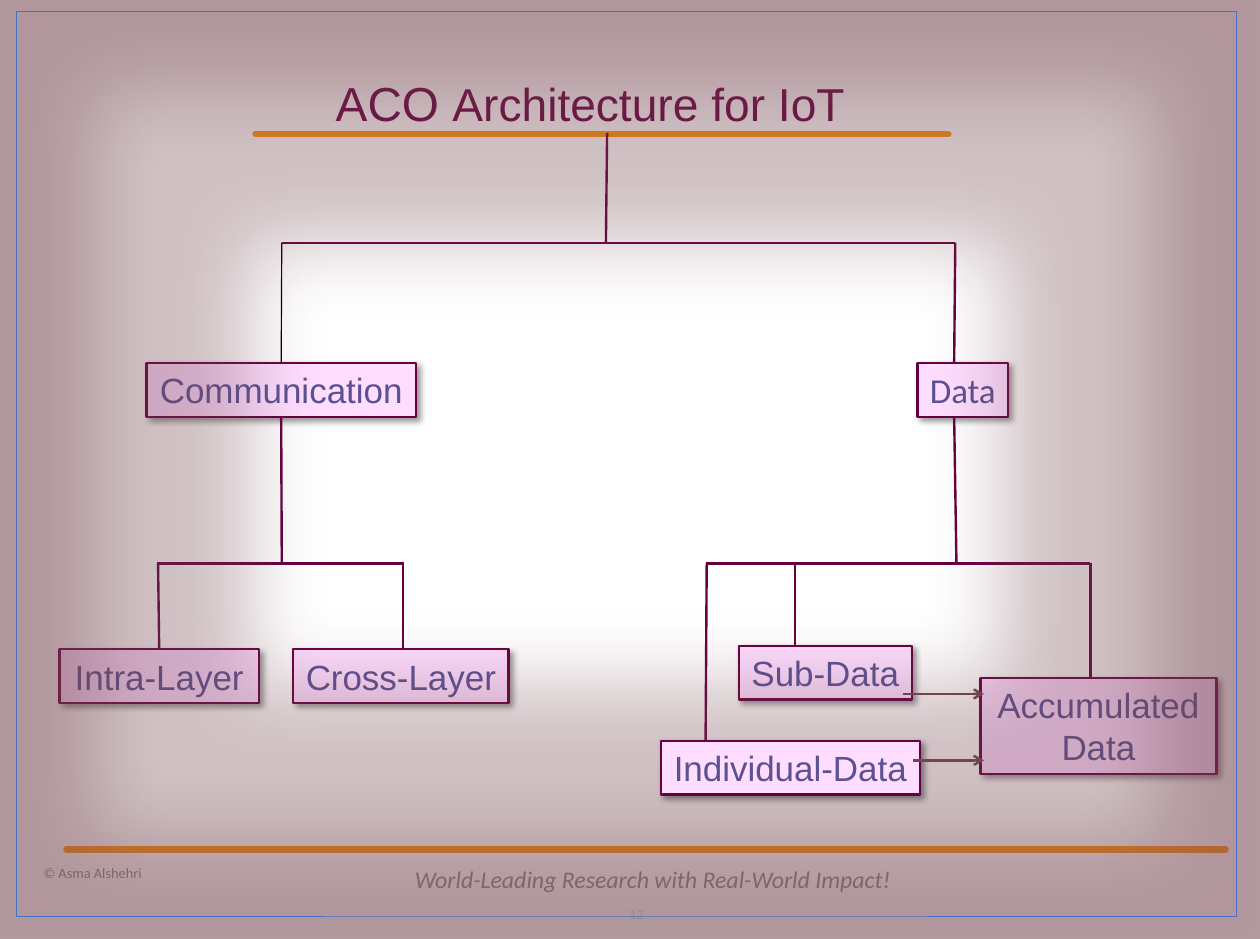
from lxml import etree
from pptx import Presentation
from pptx.dml.color import RGBColor
from pptx.enum.shapes import MSO_CONNECTOR, MSO_SHAPE
from pptx.enum.text import MSO_ANCHOR, MSO_AUTO_SIZE, PP_ALIGN
from pptx.oxml.ns import qn
from pptx.util import Pt

PX = 9144  # 100 px to the inch
STRAIGHT, RECTANGLE = MSO_CONNECTOR.STRAIGHT, MSO_SHAPE.RECTANGLE
LEFT, CENTER, RIGHT = PP_ALIGN.LEFT, PP_ALIGN.CENTER, PP_ALIGN.RIGHT
MIDDLE, BOTTOM = MSO_ANCHOR.MIDDLE, MSO_ANCHOR.BOTTOM
TOP_SIDE, BOTTOM_SIDE = 0, 2

PLUM = RGBColor(0x66, 0x00, 0x40)
ORANGE = RGBColor(0xFF, 0x95, 0x0E)
PINK = RGBColor(0xFE, 0xDD, 0xFF)
VIOLET = RGBColor(0x5C, 0x51, 0x93)
GRAY = RGBColor(0x8C, 0x8C, 0x8C)
MAUVE = RGBColor(0x73, 0x44, 0x4E)
BLUE = RGBColor(0x44, 0x72, 0xC4)
BLACK = RGBColor(0, 0, 0)


def px(*lengths):
    return [length * PX for length in lengths]


def add_effect(shape, name=None, color=BLACK, alpha=100, **attributes):
    """Give the shape one effect, or an empty effect list."""
    properties = shape._element.spPr
    for old in properties.findall(qn("a:effectLst")):
        properties.remove(old)
    effects = etree.SubElement(properties, qn("a:effectLst"))
    if name:
        effect = etree.SubElement(effects, qn(name), attributes)
        value = etree.SubElement(effect, qn("a:srgbClr"), val=str(color))
        etree.SubElement(value, qn("a:alpha"), val=str(alpha * 1000))


def add_run(paragraph, text, **formats):
    run = paragraph.add_run()
    run.text = text
    color = formats.pop("color")
    for name, value in formats.items():
        setattr(run.font, name, value)
    run.font.color.rgb = color


def add_line(slide, start, end, color=PLUM, width=1.5, cap=None, arrow=False):
    line = slide.shapes.add_connector(STRAIGHT, *px(*start, *end))
    line.line.color.rgb = color
    line.line.width = Pt(width)
    outline = line.line._get_or_add_ln()
    if cap:
        outline.set("cap", cap)
    if arrow:
        etree.SubElement(outline, qn("a:tailEnd"), type="arrow")
    add_effect(line)
    return line


def add_box(slide, lines, position, font="Arial", wrap=False):
    box = slide.shapes.add_shape(RECTANGLE, *px(*position))
    box.fill.solid()
    box.fill.fore_color.rgb = PINK
    box.line.color.rgb = PLUM
    box.line.width = Pt(1.5)
    add_effect(box, "a:outerShdw", alpha=40, blurRad=str(Pt(4)),
               dist=str(Pt(3)), dir="2700000", algn="tl", rotWithShape="0")
    frame = box.text_frame
    frame.word_wrap = wrap
    frame.auto_size = MSO_AUTO_SIZE.SHAPE_TO_FIT_TEXT
    frame.vertical_anchor = MIDDLE
    for index, text in enumerate(lines):
        paragraph = frame.add_paragraph() if index else frame.paragraphs[0]
        paragraph.alignment = CENTER
        add_run(paragraph, text, name=font, size=Pt(22), color=VIOLET)
    return box


def add_footer(slide, text, position, alignment, size=9, italic=False):
    frame = slide.shapes.add_textbox(*px(*position)).text_frame
    frame.word_wrap = True
    frame.vertical_anchor = MIDDLE
    paragraph = frame.paragraphs[0]
    paragraph.alignment = alignment
    add_run(paragraph, text, name="Calibri", size=Pt(size), italic=italic, color=GRAY)


def set_title(slide):
    title = slide.shapes.title
    title.left, title.top, title.width, title.height = px(219, 65, 593, 55)
    frame = title.text_frame
    frame.auto_size = MSO_AUTO_SIZE.NONE
    frame.vertical_anchor = BOTTOM
    paragraph = frame.paragraphs[0]
    paragraph.alignment = CENTER
    paragraph.line_spacing = 0.9
    for text, size in (("ACO ", 30), ("Architecture for IoT", 29)):
        add_run(paragraph, text, name="Arial", size=Pt(size), color=PLUM)


def add_frame(slide):
    frame = slide.shapes.add_shape(RECTANGLE, *px(14, 10, 1065, 790))
    frame.fill.background()
    frame.line.color.rgb = BLUE
    frame.line.width = Pt(0.5)
    add_effect(frame, "a:glow", MAUVE, 33, rad=str(Pt(100)))


def main():
    presentation = Presentation()
    presentation.slide_width, presentation.slide_height = px(1100, 820)
    slide = presentation.slides.add_slide(presentation.slide_layouts[5])

    # Title and orange rules
    set_title(slide)
    for left, right, y in ((223, 828, 117), (58, 1070, 742)):
        add_line(slide, (left, y), (right, y), ORANGE, 4, cap="rnd")

    # Footer
    add_footer(slide, "World-Leading Research with Real-World Impact!",
               (330, 746, 480, 44), CENTER, 15, True)
    add_footer(slide, "© Asma Alshehri", (28, 742, 302, 40), LEFT)

    # Boxes of the tree
    communication = add_box(slide, ["Communication"], (128, 317, 235, 47))
    add_box(slide, ["Data"], (801, 317, 79, 47), "Calibri")
    intra_layer = add_box(slide, ["Intra-Layer"], (52, 567, 174, 47))
    add_box(slide, ["Cross-Layer"], (256, 567, 188, 47))
    add_box(slide, ["Sub-Data"], (645, 564, 151, 47))
    add_box(slide, ["Accumulated", "Data"], (856, 592, 206, 84), wrap=True)

    # Branches that meet the middle of a box side
    add_line(slide, (246, 212), (246, 317), BLACK, 0.75).end_connect(communication, TOP_SIDE)
    add_line(slide, (246, 364), (246, 492)).begin_connect(communication, BOTTOM_SIDE)
    add_line(slide, (138, 492), (138, 567)).end_connect(intra_layer, TOP_SIDE)

    # Other branches
    for start, end in (
        ((530, 116), (529, 212)),
        ((246, 212), (834, 212)),
        ((834, 212), (833, 317)),
        ((833, 364), (835, 492)),
        ((137, 492), (353, 492)),
        ((352, 492), (352, 567)),
        ((616, 492), (952, 492)),
        ((617, 492), (616, 647)),
        ((694, 492), (694, 564)),
        ((952, 492), (952, 592)),
    ):
        add_line(slide, start, end)

    # Glowing frame, with the last box and the arrows above it
    add_frame(slide)
    add_box(slide, ["Individual-Data"], (577, 647, 226, 47))
    for left, y in ((788, 606), (797, 664)):
        add_line(slide, (left, y), (859, y), MAUVE, arrow=True)
    add_footer(slide, "12", (528, 776, 44, 44), RIGHT)

    presentation.save("out.pptx")


if __name__ == "__main__":
    main()
